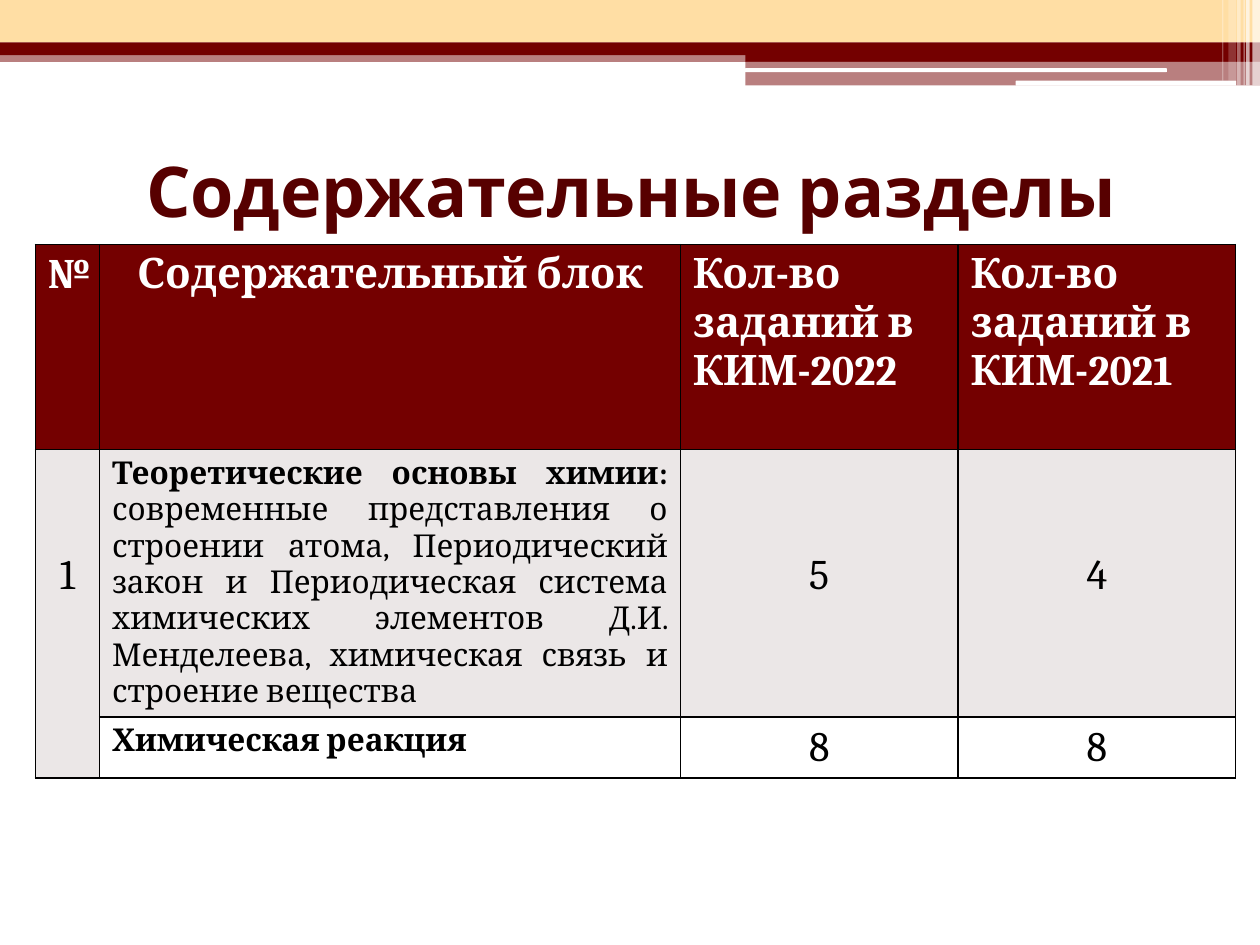
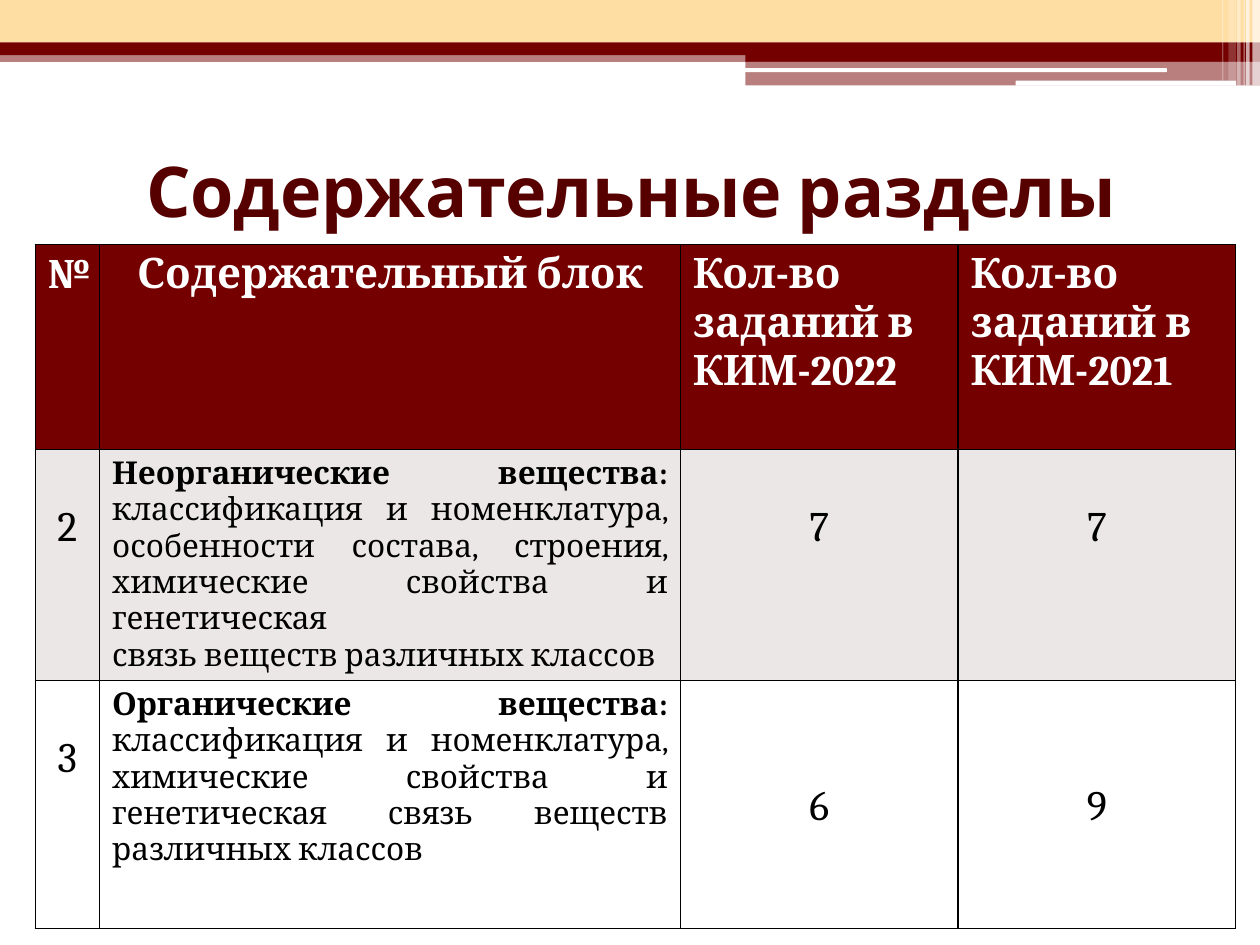
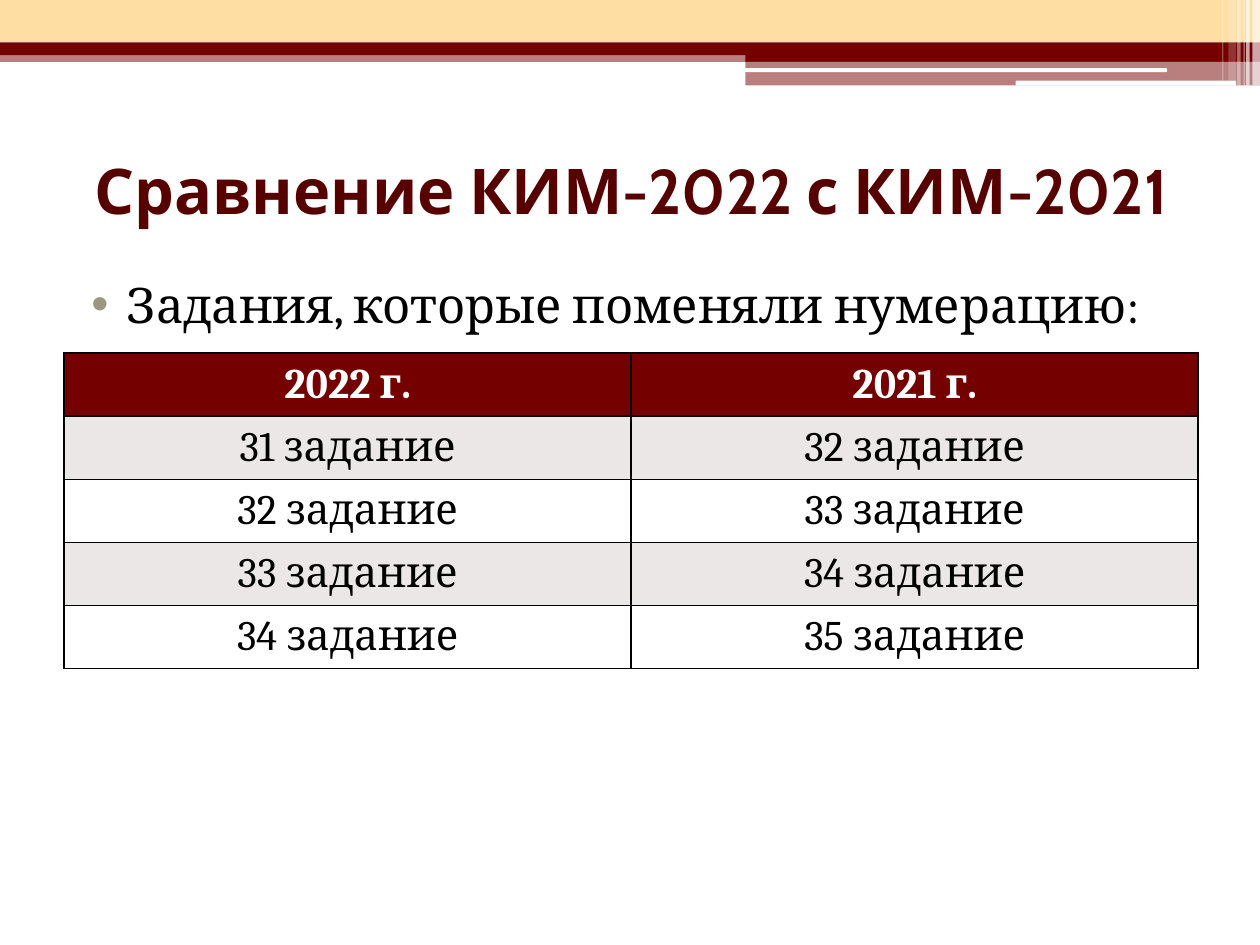
import dataclasses
from typing import Any, Optional

import lxml.etree
import pptx
import pptx.dml.color
import pptx.enum.shapes
import pptx.enum.text
import pptx.oxml.ns
import pptx.util

Pt = pptx.util.Pt
qn = pptx.oxml.ns.qn
ALIGN = pptx.enum.text.PP_ALIGN
ANCHOR = pptx.enum.text.MSO_ANCHOR
SHAPE = pptx.enum.shapes.MSO_SHAPE

# Shared colours, fonts and measures
MAROON, SAND, WHITE, BLACK = "740000", "FFDEA4", "FFFFFF", "000000"
TITLE_COLOR, STRIPE, BULLET_COLOR = "570000", "EBE7E7", "99987F"
TITLE_FONT, BODY_FONT = "Cabin", "Cambria"
TABLE_SIZE, TOPIC_SIZE = 24, 18
CELL_MARGIN, LINE_HEIGHT = 3.6, 27.43


@dataclasses.dataclass(frozen=True)
class Band:
    left: float
    top: float
    width: float
    height: float
    color: str
    alpha: int = 100
    rounded: bool = False


@dataclasses.dataclass(frozen=True)
class Cell:
    bold: str = ""
    plain: str = ""
    size: int = TABLE_SIZE
    align: Any = ALIGN.CENTER
    lines_down: int = 0


@dataclasses.dataclass(frozen=True)
class TableSpec:
    left: float
    top: float
    columns: tuple[float, ...]
    row_heights: tuple[float, ...]
    rows: tuple[tuple[Optional[Cell], ...], ...]  # None continues the cell above
    anchor: Any = ANCHOR.TOP


BANDS = (
    Band(0, 28.8, 720, 6.6, MAROON, 50),
    Band(0, 0, 720, 24.3, SAND),
    Band(0, 24.3, 720, 7.2, MAROON),
    Band(426, 28.1, 294, 7.2, MAROON),
    Band(426, 34.8, 294, 14, MAROON, 50),
    Band(425.6, 39, 241.2, 2.2, WHITE, rounded=True),
    Band(580.4, 46.1, 126, 2.9, WHITE, rounded=True),
    Band(715.7, 0, 4.3, 48.8, WHITE, 65),
    Band(712.1, 0, 2, 48.8, WHITE, 65),
    Band(710.6, 0, 0.7, 48.8, WHITE, 60),
    Band(707, 0, 2, 48.8, WHITE, 40),
    Band(702, 0, 4.3, 46.1, WHITE, 20),
    Band(698.4, 0, 0.7, 46.1, WHITE, 30),
)


def rgb(color: str) -> pptx.dml.color.RGBColor:
    return pptx.dml.color.RGBColor.from_string(color)


def apply(target: Any, formats: dict[str, Any]) -> None:
    for attribute, value in formats.items():
        setattr(target, attribute, value)


def format_font(font: Any, name: str, size: float, color: str, bold: bool) -> None:
    apply(font, {"name": name, "size": Pt(size), "bold": bold})
    font.color.rgb = rgb(color)


# Bands at the top, moved from a slide to the layout all slides share
def draw_band(slide: Any, band: Band) -> Any:
    kind = SHAPE.ROUNDED_RECTANGLE if band.rounded else SHAPE.RECTANGLE
    strip = slide.shapes.add_shape(
        kind, Pt(band.left), Pt(band.top), Pt(band.width), Pt(band.height))
    strip.shadow.inherit = False
    strip.line.fill.background()
    strip.fill.solid()
    strip.fill.fore_color.rgb = rgb(band.color)
    if band.alpha < 100:
        tint = next(strip.element.spPr.iter(qn("a:srgbClr")))
        lxml.etree.SubElement(tint, qn("a:alpha"), val=str(band.alpha * 1000))
    return strip


def share_bands(slide: Any, layout: Any) -> None:
    for band in BANDS:
        layout.shapes.element.append(draw_band(slide, band).element)


def clear_footers(layout: Any) -> None:
    for holder in list(layout.placeholders):
        if holder.placeholder_format.type != pptx.enum.shapes.PP_PLACEHOLDER.TITLE:
            holder.element.getparent().remove(holder.element)


def add_titled_slide(deck: Any, layout: Any, text: str, size: float) -> Any:
    slide = deck.slides.add_slide(layout)
    title = slide.shapes.title
    apply(title, {"left": Pt(36.5), "top": Pt(66), "width": Pt(648), "height": Pt(84.5)})
    frame = title.text_frame
    frame.text = text
    apply(frame, {"vertical_anchor": ANCHOR.MIDDLE, "word_wrap": True,
                  "auto_size": pptx.enum.text.MSO_AUTO_SIZE.NONE})
    heading = frame.paragraphs[0]
    heading.alignment = ALIGN.CENTER
    format_font(heading.runs[0].font, TITLE_FONT, size, TITLE_COLOR, True)
    return slide


# Tables
def add_borders(cell: Any) -> None:
    properties = cell._tc.get_or_add_tcPr()
    for side in ("a:lnL", "a:lnR", "a:lnT", "a:lnB"):
        border = lxml.etree.SubElement(properties, qn(side), w=str(Pt(1)))
        paint = lxml.etree.SubElement(border, qn("a:solidFill"))
        lxml.etree.SubElement(paint, qn("a:srgbClr"), val=BLACK)


def write_cell(cell: Any, content: Cell, color: str) -> None:
    frame = cell.text_frame
    paragraph = frame.paragraphs[0]
    for text, bold in ((content.bold, True), (content.plain, False)):
        for index, line in enumerate(text.split("\n")):
            if index:
                paragraph = frame.add_paragraph()
            if line:
                run = paragraph.add_run()
                run.text = line
                format_font(run.font, BODY_FONT, content.size, color, bold)
    for paragraph in frame.paragraphs:
        paragraph.alignment = content.align
    cell.margin_top = Pt(CELL_MARGIN + content.lines_down * LINE_HEIGHT)


def draw_table(slide: Any, spec: TableSpec) -> None:
    table = slide.shapes.add_table(
        len(spec.rows), len(spec.columns), Pt(spec.left), Pt(spec.top),
        Pt(sum(spec.columns)), Pt(sum(spec.row_heights))).table
    for column, width in zip(table.columns, spec.columns):
        column.width = Pt(width)
    for row, height in zip(table.rows, spec.row_heights):
        row.height = Pt(height)
    for r, contents in enumerate(spec.rows):
        fill = MAROON if r == 0 else (STRIPE if r % 2 else WHITE)
        for c, content in enumerate(contents):
            cell = table.cell(r, c)
            add_borders(cell)
            cell.fill.solid()
            cell.fill.fore_color.rgb = rgb(fill)
            cell.vertical_anchor = spec.anchor
            if content is None:
                table.cell(r - 1, c).merge(cell)
            else:
                write_cell(cell, content, BLACK if r else WHITE)


# Contents of the section tables
SECTION_HEADER = (
    Cell("№"),
    Cell("Содержательный блок"),
    *(Cell(f"Кол-во\nзаданий в КИМ-{year}", align=ALIGN.LEFT) for year in (2022, 2021)),
)


def topic(name: str, details: str = "") -> Cell:
    return Cell(name, details, TOPIC_SIZE, ALIGN.JUSTIFY)


def count(number: int, lines_down: int = 0) -> Cell:
    return Cell(plain=str(number), lines_down=lines_down)


def section_table(heights: tuple[float, ...], *rows: tuple[Optional[Cell], ...]) -> TableSpec:
    return TableSpec(20.16, 139.8, (36.72, 331.92, 158.7, 158.7),
                     (117.2, *heights), (SECTION_HEADER, *rows))


THEORY = section_table(
    (152.6, 34.9),
    (count(1, 2),
     topic("Теоретические основы химии: ",
           "современные представления о строении атома, Периодический закон и "
           "Периодическая система химических элементов Д.И. Менделеева, "
           "химическая связь и строение вещества"),
     count(5, 2), count(4, 2)),
    (None, topic("Химическая реакция"), count(8), count(8)),
)
SUBSTANCES = section_table(
    (132, 141.7),
    (count(2, 1),
     topic("Неорганические вещества: ",
           "классификация и номенклатура, особенности состава, строения, "
           "химические свойства и генетическая\nсвязь веществ различных классов"),
     count(7, 1), count(7, 1)),
    (count(3, 1),
     topic("Органические вещества: ",
           "классификация и номенклатура, химические свойства и "
           "генетическая связь веществ различных классов"),
     count(6, 2), count(9, 2)),
)
RENUMBERED = TableSpec(
    36.72, 201.8, (324, 324), (34.9,) * 5,
    ((Cell("2022 г."), Cell("2021 г.")),
     *((Cell(plain=f"{task} задание"), Cell(plain=f"{task + 1} задание"))
       for task in range(31, 35))),
    ANCHOR.MIDDLE,
)


def add_bullet_line(slide: Any, text: str) -> None:
    frame = slide.shapes.add_textbox(Pt(36.5), Pt(153.4), Pt(648), Pt(45)).text_frame
    frame.word_wrap = True
    line = frame.paragraphs[0]
    apply(line, {"text": text, "alignment": ALIGN.JUSTIFY, "space_before": Pt(3)})
    format_font(line.runs[0].font, BODY_FONT, 28, BLACK, False)
    properties = line._p.get_or_add_pPr()
    apply_indent = {"marL": Pt(28.8), "indent": Pt(-20.16)}
    for key, length in apply_indent.items():
        properties.set(key, str(length))
    paint = lxml.etree.SubElement(properties, qn("a:buClr"))
    lxml.etree.SubElement(paint, qn("a:srgbClr"), val=BULLET_COLOR)
    lxml.etree.SubElement(properties, qn("a:buFont"), typeface="Arial")
    lxml.etree.SubElement(properties, qn("a:buChar"), char="•")


def main() -> None:
    deck = pptx.Presentation()
    apply(deck, {"slide_width": Pt(720), "slide_height": Pt(540)})
    layout = deck.slide_layouts[5]
    clear_footers(layout)

    # Section slides
    theory = add_titled_slide(deck, layout, "Содержательные разделы", 40)
    share_bands(theory, layout)
    draw_table(theory, THEORY)
    substances = add_titled_slide(deck, layout, "Содержательные разделы", 40)
    draw_table(substances, SUBSTANCES)

    # Renumbered tasks
    comparison = add_titled_slide(deck, layout, "Сравнение КИМ-2022 с КИМ-2021", 36)
    add_bullet_line(comparison, "Задания, которые поменяли нумерацию:")
    draw_table(comparison, RENUMBERED)

    deck.save("out.pptx")


if __name__ == "__main__":
    main()
